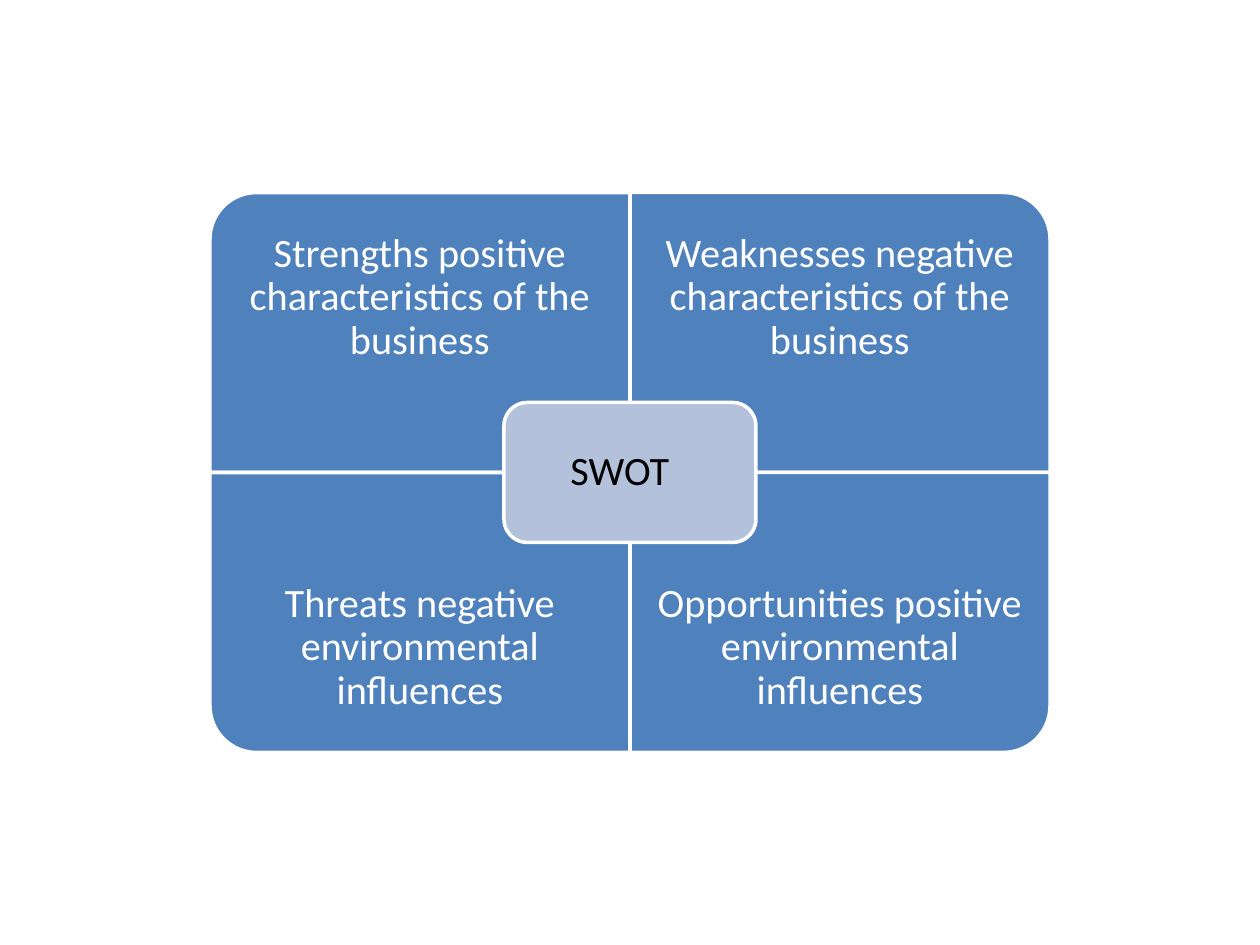
from pptx import Presentation
from pptx.dml.color import RGBColor
from pptx.enum.shapes import MSO_SHAPE
from pptx.enum.text import MSO_ANCHOR, PP_ALIGN
from pptx.util import Inches, Pt

BLUE = RGBColor(0x4F, 0x81, 0xBD)
PALE_BLUE = RGBColor(0xB3, 0xC1, 0xDB)
WHITE = RGBColor(0xFF, 0xFF, 0xFF)
BLACK = RGBColor(0x00, 0x00, 0x00)

deck = Presentation()
deck.slide_width, deck.slide_height = Inches(10), Inches(7.5)
page = deck.slides.add_slide(deck.slide_layouts[6])

middle_x, middle_y = deck.slide_width // 2, deck.slide_height // 2
column = deck.slide_width // 3
row = column * 2 // 3
label_height = row * 3 // 4


def add_panel(kind, center_x, center_y, width, height, fill, rotation=0):
    panel = page.shapes.add_shape(
        kind, center_x - width // 2, center_y - height // 2, width, height
    )
    panel.rotation = rotation
    panel.shadow.inherit = False
    panel.fill.solid()
    panel.fill.fore_color.rgb = fill
    panel.line.color.rgb = WHITE
    panel.line.width = Pt(2)


def add_label(text, left, top, width, height, color=WHITE, inset=0.18, right_inset=0.18):
    box = page.shapes.add_textbox(left, top, width, height)
    frame = box.text_frame
    frame.word_wrap = True
    frame.vertical_anchor = MSO_ANCHOR.MIDDLE
    frame.margin_left = frame.margin_top = frame.margin_bottom = Inches(inset)
    frame.margin_right = Inches(right_inset)
    para = frame.paragraphs[0]
    para.alignment = PP_ALIGN.CENTER
    para.line_spacing = 0.9
    span = para.add_run()
    span.text = text
    span.font.name = "Calibri"
    span.font.size = Pt(23)
    span.font.color.rgb = color


quadrants = [
    ("Strengths positive characteristics of the business", 0, 0, 270),
    ("Weaknesses negative characteristics of the business", 1, 0, 0),
    ("Threats negative environmental influences", 0, 1, 180),
    ("Opportunities positive environmental influences", 1, 1, 90),
]
for text, across, down, rotation in quadrants:
    left = middle_x + (across - 1) * column
    top = middle_y + (down - 1) * row
    width, height = (row, column) if rotation in (90, 270) else (column, row)
    add_panel(MSO_SHAPE.ROUND_1_RECTANGLE, left + column // 2, top + row // 2,
              width, height, BLUE, rotation)
    add_label(text, left, top + down * (row - label_height), column, label_height)

hub_width, hub_height = column * 3 // 5, row // 2
add_panel(MSO_SHAPE.ROUNDED_RECTANGLE, middle_x, middle_y, hub_width, hub_height, PALE_BLUE)
add_label("SWOT", middle_x - hub_width // 2, middle_y - hub_height // 2,
          hub_width, hub_height, color=BLACK, inset=0.15, right_inset=0.31)

deck.save("out.pptx")
